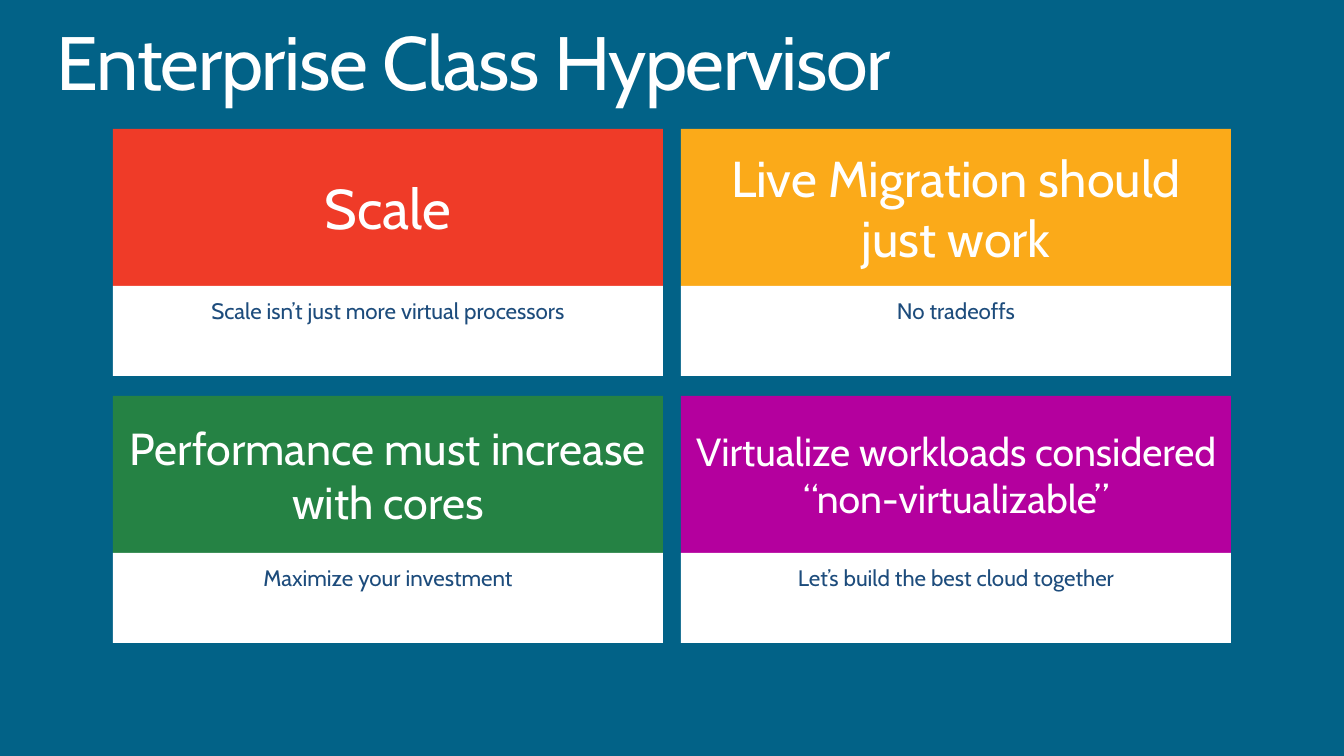
from dataclasses import dataclass

from pptx import Presentation
from pptx.dml.color import RGBColor
from pptx.enum.shapes import MSO_SHAPE
from pptx.enum.text import MSO_ANCHOR, PP_ALIGN
from pptx.util import Emu, Pt

TITLE = "Enterprise Class Hypervisor"

# heading, heading size in points, heading colour, caption
CARDS = [
    ("Scale", 40, "EF3B28", "Scale isn’t just more virtual processors"),
    ("Live Migration should just work", 36, "FBAA19", "No tradeoffs"),
    ("Performance must increase with cores", 32, "258244", "Maximize your investment"),
    ("Virtualize workloads considered “non-virtualizable”", 28, "B4009E",
     "Let’s build the best cloud together"),
]


@dataclass(frozen=True)
class Theme:
    font: str = "Cabin"
    background: str = "026287"
    light: str = "FFFFFF"
    caption: str = "1D4C7C"
    title_size: int = 54
    caption_size: int = 16


THEME = Theme()
SLIDE_WIDTH, SLIDE_HEIGHT = 1344, 756
EMU_PER_PX = 12192000 / SLIDE_WIDTH

COLUMNS = 2
GRID_LEFT, GRID_TOP = 113, 129
CARD_WIDTH, HEADING_HEIGHT, PANEL_HEIGHT = 550, 157, 90
COLUMN_GAP, ROW_GAP = 18, 20
CAPTION_DROP, CAPTION_HEIGHT = 6, 37


def px(*lengths):
    return [Emu(round(length * EMU_PER_PX)) for length in lengths]


def add_block(slide, box, color):
    block = slide.shapes.add_shape(MSO_SHAPE.RECTANGLE, *px(*box))
    block.shadow.inherit = False
    block.fill.solid()
    block.fill.fore_color.rgb = RGBColor.from_string(color)
    block.line.fill.background()
    return block


def write(frame, text, size, color, align):
    """Put one styled run in the frame's first paragraph and return the run."""
    frame.word_wrap = True
    paragraph = frame.paragraphs[0]
    paragraph.alignment = align
    run = paragraph.add_run()
    run.text = text
    run.font.name = THEME.font
    run.font.size = Pt(size)
    run.font.color.rgb = RGBColor.from_string(color)
    return run


def add_title(slide):
    frame = slide.shapes.add_textbox(*px(57, 25, 1229, 83)).text_frame
    frame.margin_left = frame.margin_right = frame.margin_top = frame.margin_bottom = 0
    run = write(frame, TITLE, THEME.title_size, THEME.light, PP_ALIGN.LEFT)
    run.font._element.set("spc", "-100")
    frame.paragraphs[0].line_spacing = 0.9


def add_card(slide, left, top, heading, heading_size, color, caption):
    panel_top = top + HEADING_HEIGHT
    header = add_block(slide, (left, top, CARD_WIDTH, HEADING_HEIGHT), color)
    header.text_frame.vertical_anchor = MSO_ANCHOR.MIDDLE
    write(header.text_frame, heading, heading_size, THEME.light, PP_ALIGN.CENTER)
    add_block(slide, (left, panel_top, CARD_WIDTH, PANEL_HEIGHT), THEME.light)
    caption_box = slide.shapes.add_textbox(
        *px(left, panel_top + CAPTION_DROP, CARD_WIDTH, CAPTION_HEIGHT))
    write(caption_box.text_frame, caption, THEME.caption_size, THEME.caption, PP_ALIGN.CENTER)


def main():
    deck = Presentation()
    deck.slide_width, deck.slide_height = px(SLIDE_WIDTH, SLIDE_HEIGHT)
    slide = deck.slides.add_slide(deck.slide_layouts[6])
    slide.background.fill.solid()
    slide.background.fill.fore_color.rgb = RGBColor.from_string(THEME.background)

    add_title(slide)
    for index, card in enumerate(CARDS):
        row, column = divmod(index, COLUMNS)
        left = GRID_LEFT + column * (CARD_WIDTH + COLUMN_GAP)
        top = GRID_TOP + row * (HEADING_HEIGHT + PANEL_HEIGHT + ROW_GAP)
        add_card(slide, left, top, *card)
    deck.save("out.pptx")


if __name__ == "__main__":
    main()
